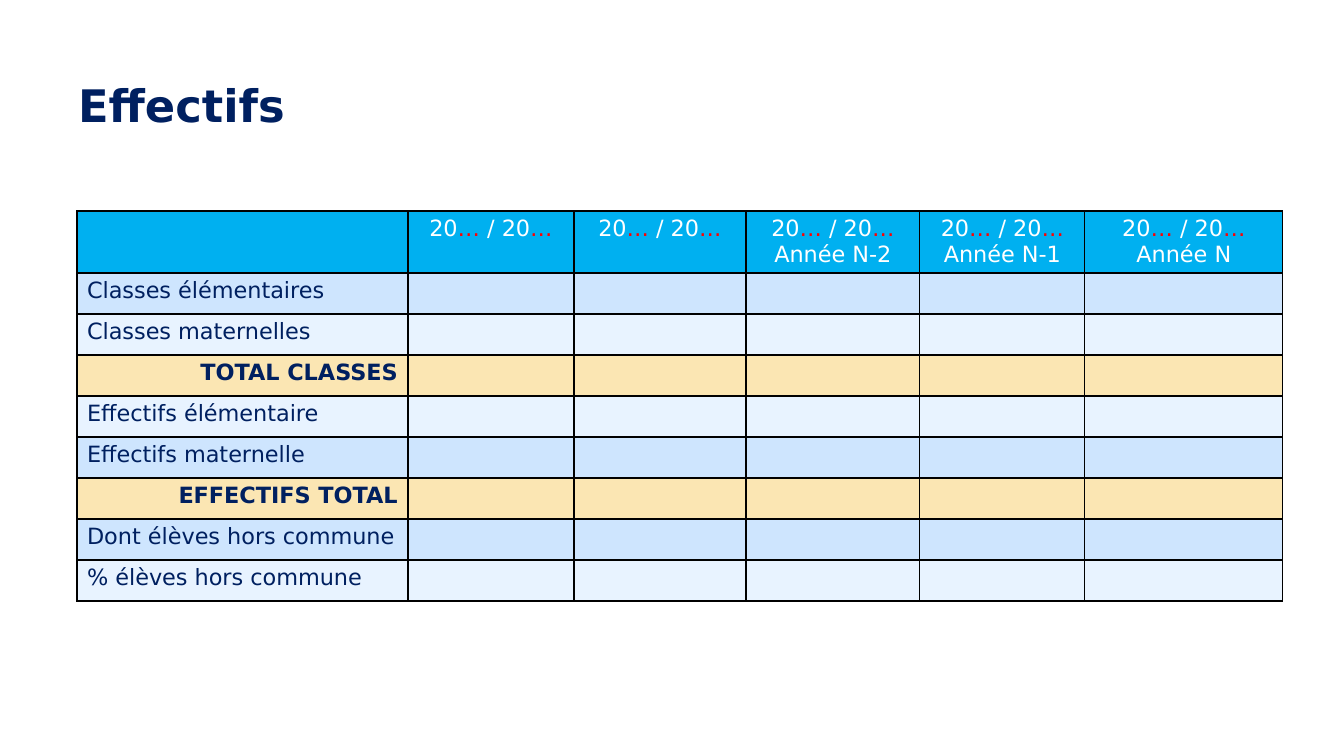
from dataclasses import dataclass

from lxml.etree import SubElement
from pptx import Presentation
from pptx.dml.color import RGBColor
from pptx.enum.text import MSO_ANCHOR, MSO_AUTO_SIZE, PP_ALIGN
from pptx.oxml.ns import qn
from pptx.slide import Slide
from pptx.table import _Cell
from pptx.util import Emu, Pt

PX_PER_INCH = 100.8
FONT = "DejaVu Sans"
NAVY, WHITE, RED, BLACK = "002060", "FFFFFF", "FF0000", "000000"
HEADER_BLUE, MID_BLUE, PALE_BLUE, SAND = "00B0F0", "CEE5FE", "E8F3FF", "FBE6B3"

TABLE_LEFT, TABLE_TOP = 77, 211
COLUMN_WIDTHS = [331, 166, 172, 174, 165, 198]
HEADER_HEIGHT, ROW_HEIGHT = 62, 41
YEAR_RUNS = [("20", WHITE), ("… ", RED), ("/ 20", WHITE), ("…", RED)]
YEAR_LABELS = ["", "", "Année N-2", "Année N-1", "Année N"]


@dataclass(frozen=True)
class Row:
    label: str
    fill: str
    total: bool = False


ROWS = [
    Row("Classes élémentaires", MID_BLUE),
    Row("Classes maternelles", PALE_BLUE),
    Row("TOTAL CLASSES", SAND, total=True),
    Row("Effectifs élémentaire", PALE_BLUE),
    Row("Effectifs maternelle", MID_BLUE),
    Row("EFFECTIFS TOTAL", SAND, total=True),
    Row("Dont élèves hors commune", MID_BLUE),
    Row("% élèves hors commune", PALE_BLUE),
]


def px(length: int) -> Emu:
    return Emu(round(length * 914400 / PX_PER_INCH))


def rgb(colour: str) -> RGBColor:
    return RGBColor.from_string(colour)


def add_span(para, text: str, colour: str, size: int = 16, bold: bool = False) -> None:
    span = para.add_run()
    span.text = text
    span.font.name = FONT
    span.font.size = Pt(size)
    span.font.bold = bold
    span.font.color.rgb = rgb(colour)


def style_cell(cell: _Cell, fill: str) -> None:
    """Draw the four borders, then the fill that must follow them in the XML."""
    properties = cell._tc.get_or_add_tcPr()
    for side in ("a:lnL", "a:lnR", "a:lnT", "a:lnB"):
        line = SubElement(properties, qn(side), w=str(Pt(1)))
        solid = SubElement(line, qn("a:solidFill"))
        SubElement(solid, qn("a:srgbClr"), val=BLACK)
    cell.fill.solid()
    cell.fill.fore_color.rgb = rgb(fill)


def add_title(page: Slide) -> None:
    box = page.shapes.title
    box.left, box.top, box.width, box.height = px(68), px(69), px(470), px(88)
    frame = box.text_frame
    frame.auto_size = MSO_AUTO_SIZE.NONE
    frame.vertical_anchor = MSO_ANCHOR.TOP
    frame.margin_top = px(9)
    para = frame.paragraphs[0]
    para.alignment = PP_ALIGN.LEFT
    add_span(para, "Effectifs", NAVY, size=32, bold=True)


def fill_year(cell: _Cell, label: str) -> None:
    para = cell.text_frame.paragraphs[0]
    para.alignment = PP_ALIGN.CENTER
    for text, colour in YEAR_RUNS:
        add_span(para, text, colour)
    if label:
        para = cell.text_frame.add_paragraph()
        para.alignment = PP_ALIGN.CENTER
        add_span(para, label, WHITE)


def add_enrolment_table(page: Slide) -> None:
    heights = [HEADER_HEIGHT] + [ROW_HEIGHT] * len(ROWS)
    table = page.shapes.add_table(
        len(heights), len(COLUMN_WIDTHS), px(TABLE_LEFT), px(TABLE_TOP),
        px(sum(COLUMN_WIDTHS)), px(sum(heights)),
    ).table
    table.first_row = table.horz_banding = False
    for column, width in zip(table.columns, COLUMN_WIDTHS):
        column.width = px(width)
    fills = [HEADER_BLUE] + [row.fill for row in ROWS]
    for table_row, height, fill in zip(table.rows, heights, fills):
        table_row.height = px(height)
        for cell in table_row.cells:
            style_cell(cell, fill)
    for index, label in enumerate(YEAR_LABELS, start=1):
        fill_year(table.cell(0, index), label)
    for index, row in enumerate(ROWS, start=1):
        para = table.cell(index, 0).text_frame.paragraphs[0]
        para.alignment = PP_ALIGN.RIGHT if row.total else PP_ALIGN.LEFT
        add_span(para, row.label, NAVY, bold=row.total)


def main() -> None:
    deck = Presentation()
    deck.slide_width, deck.slide_height = px(1344), px(756)
    page = deck.slides.add_slide(deck.slide_layouts.get_by_name("Title Only"))
    add_title(page)
    add_enrolment_table(page)
    deck.save("out.pptx")


if __name__ == "__main__":
    main()
